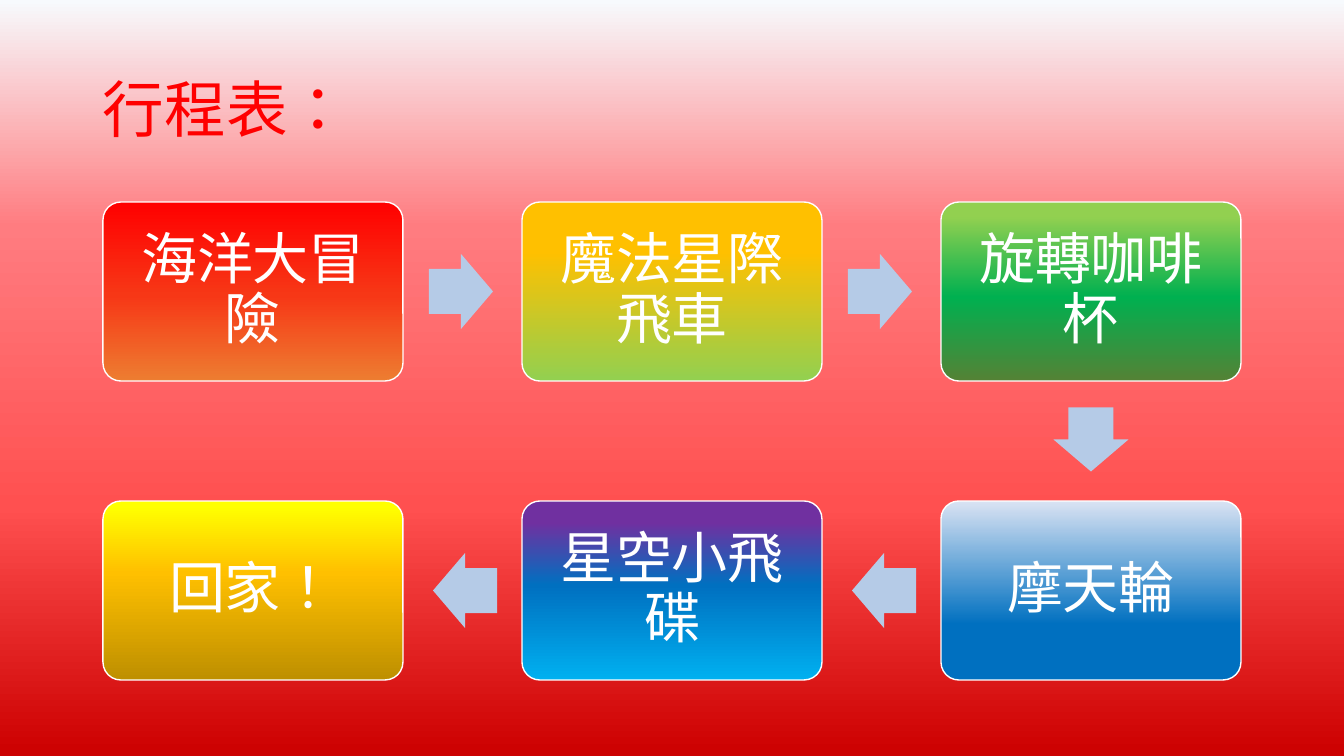
from lxml.etree import SubElement
from pptx import Presentation
from pptx.dml.color import RGBColor
from pptx.enum.shapes import MSO_SHAPE as SHAPE
from pptx.enum.text import MSO_ANCHOR as ANCHOR, PP_ALIGN as ALIGN
from pptx.oxml.ns import qn
from pptx.util import Pt

PX = 9144000 / 1008  # EMU per px
COLORS = {"title": "FF0000", "text": "FFFFFF", "line": "FFFFFF", "arrow": "B5CBE7"}
BACKGROUND = [(0, "F7FAFD"), (30, "FF7C80"), (67, "FF5050"), (100, "CC0000")]

# Stops in visiting order: column, row, name, gradient
STOPS = [
    (0, 0, "海洋大冒險", [(0, "FF0000"), (52, "F73716"), (100, "ED7D31")]),
    (1, 0, "魔法星際飛車", [(0, "FFC000"), (28, "FFC000"), (100, "92D050")]),
    (2, 0, "旋轉咖啡杯", [(8, "92D050"), (53, "00B050"), (100, "548235")]),
    (2, 1, "摩天輪", [(0, "DAE3F3"), (69, "0070C0"), (100, "0070C0")]),
    (1, 1, "星空小飛碟", [(12, "7030A0"), (47, "0070C0"), (100, "00B0F0")]),
    (0, 1, "回家！", [(3, "FFFF00"), (40, "FFC000"), (99, "BF9000")]),
]
LEFT, TOP, STEP_X, STEP_Y = 103, 202, 419, 299
BOX_W, BOX_H, ARROW_W, ARROW_H = 300, 179, 64, 75


def px(n):
    return round(n * PX)


def rgb(name):
    return RGBColor.from_string(COLORS[name])


def set_gradient(fill, element, stops):
    """Fill from top to bottom with (percent, hex) stops."""
    fill.gradient()
    fill.gradient_angle = 270
    gs_list = element.find(".//" + qn("a:gsLst"))
    for gs in list(gs_list):
        gs_list.remove(gs)
    for percent, color in stops:
        gs = SubElement(gs_list, qn("a:gs"), pos=str(percent * 1000))
        SubElement(gs, qn("a:srgbClr"), val=color)


def write(tf, text, size, color, font, align, inset):
    tf.word_wrap = True
    tf.vertical_anchor = ANCHOR.MIDDLE
    tf.margin_left = tf.margin_right = px(inset)
    tf.margin_top = tf.margin_bottom = px(inset)
    p = tf.paragraphs[0]
    p.alignment, p.line_spacing = align, 0.9
    r = p.add_run()
    r.text = text
    r.font.size, r.font.name = Pt(size), font
    r.font.color.rgb = rgb(color)
    r.font._element.set("lang", "zh-TW")
    SubElement(r.font._element, qn("a:ea"), typeface="Noto Sans CJK SC")


class Board:
    def __init__(self, prs):
        self.s = prs.slides.add_slide(prs.slide_layouts[5])
        set_gradient(self.s.background.fill, self.s.element, BACKGROUND)

    def title(self, text, x, y, w, h):
        sp = self.s.shapes.title
        sp.left, sp.top, sp.width, sp.height = map(px, (x, y, w, h))
        write(sp.text_frame, text, size=44, color="title",
              font="Noto Sans CJK SC", align=ALIGN.LEFT, inset=10)

    def shape(self, kind, x, y, w, h, *adjustments):
        sp = self.s.shapes.add_shape(kind, *map(px, (x, y, w, h)))
        sp.shadow.inherit = False
        for i, value in enumerate(adjustments):
            sp.adjustments[i] = value
        return sp

    def box(self, text, x, y, stops):
        sp = self.shape(SHAPE.ROUNDED_RECTANGLE, x, y, BOX_W, BOX_H, 0.1)
        set_gradient(sp.fill, sp.element, stops)
        sp.line.color.rgb, sp.line.width = rgb("line"), Pt(1)
        write(sp.text_frame, text, size=40, color="text",
              font="Calibri", align=ALIGN.CENTER, inset=22)

    def arrow(self, x, y, rotation):
        sp = self.shape(SHAPE.RIGHT_ARROW, x, y, ARROW_W, ARROW_H, 0.6, 0.5)
        sp.rotation = rotation
        sp.fill.solid()
        sp.fill.fore_color.rgb = rgb("arrow")
        sp.line.fill.background()


def main():
    prs = Presentation()
    prs.slide_width, prs.slide_height = px(1344), px(756)
    board = Board(prs)
    board.title("行程表：", 93, 40, 1159, 146)

    for i, (col, row, name, stops) in enumerate(STOPS):
        x, y = LEFT + col * STEP_X, TOP + row * STEP_Y
        board.box(name, x, y, stops)
        if i + 1 == len(STOPS):
            break
        next_col = STOPS[i + 1][0]
        if next_col > col:
            board.arrow(x + 326, y + 52, 0)
        elif next_col < col:
            board.arrow(x - 89, y + 52, 180)
        else:
            board.arrow(x + 118, y + 200, 90)

    prs.save("out.pptx")


if __name__ == "__main__":
    main()
